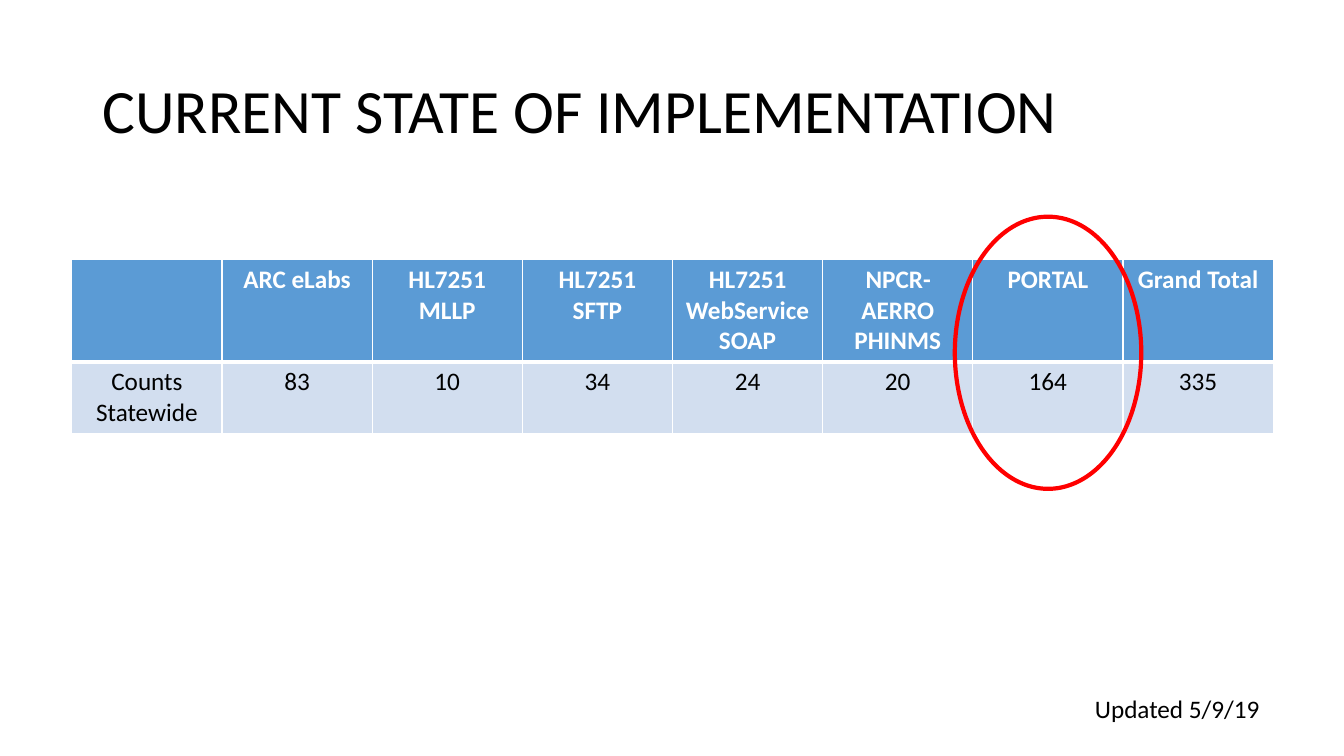
import pptx
import pptx.util
import pptx.oxml
import pptx.oxml.ns
import pptx.dml.color
import pptx.enum.text
import pptx.enum.shapes

Pt = pptx.util.Pt
RGB = pptx.dml.color.RGBColor
ALIGN = pptx.enum.text.PP_ALIGN
ANCHOR = pptx.enum.text.MSO_ANCHOR

# Content
TITLE = "CURRENT STATE OF IMPLEMENTATION"
DATE = "Updated 5/9/19"
COUNTS = [
    ("", "Counts Statewide"),
    ("ARC eLabs", "83"),
    ("HL7251 MLLP", "10"),
    ("HL7251 SFTP", "34"),
    ("HL7251 WebService SOAP", "24"),
    ("NPCR-AERRO PHINMS", "20"),
    ("PORTAL", "164"),
    ("Grand Total", "335"),
]

# Colours and formats
WHITE = RGB(0xFF, 0xFF, 0xFF)
BLACK = RGB(0, 0, 0)
BLUE = RGB(0x5B, 0x9B, 0xD5)
PALE = RGB(0xD2, 0xDE, 0xEF)
RED = RGB(0xFF, 0, 0)
HEAD = {"name": "Calibri", "size": Pt(18), "bold": True}
BODY = {"name": "Calibri", "size": Pt(18), "bold": False}
BIG = {"name": "Calibri", "size": Pt(44), "bold": False}
# Per row: height, fill, text colour, font, bottom border width
ROWS = [
    (72.5, BLUE, WHITE, HEAD, 3),
    (50.5, PALE, BLACK, BODY, 1),
]

# Layout in points: left, top, width, height
TITLE_BOX = (66, 28.8, 828, 104.4)
DATE_BOX = (775, 491.8, 574.5, 29)
LEFT, TOP, COL = 51.3, 185.3, 107.28
RING_COL, RING_TOP, RING_W, RING_H = 6, 154.8, 133.2, 194.4


def write(frame, text, form, color, align):
    para = frame.paragraphs[0]
    para.alignment = align
    run = para.add_run()
    run.text = text
    for key, value in form.items():
        setattr(run.font, key, value)
    run.font.color.rgb = color
    return para


def edge(cell, bottom):
    """Draw white borders on the four sides of a cell."""
    props = cell._tc.get_or_add_tcPr()
    sides = {"lnL": 1, "lnR": 1, "lnT": 1, "lnB": bottom}
    for spot, (side, width) in enumerate(sides.items()):
        line = pptx.oxml.parse_xml(
            f'<a:{side} {pptx.oxml.ns.nsdecls("a")} w="{Pt(width)}">'
            f'<a:solidFill><a:srgbClr val="{WHITE}"/></a:solidFill></a:{side}>')
        props.insert(spot, line)


def main():
    deck = pptx.Presentation()
    deck.slide_width, deck.slide_height = Pt(960), Pt(540)
    slide = deck.slides.add_slide(deck.slide_layouts[5])
    shapes = slide.shapes

    # Title
    title = shapes.title
    title.left, title.top, title.width, title.height = map(Pt, TITLE_BOX)
    title.text_frame.vertical_anchor = ANCHOR.MIDDLE
    para = write(title.text_frame, TITLE, BIG, BLACK, ALIGN.LEFT)
    para.line_spacing = 0.9

    # Table of counts
    size = [COL * len(COUNTS), sum(row[0] for row in ROWS)]
    table = shapes.add_table(len(ROWS), len(COUNTS),
                             *map(Pt, [LEFT, TOP] + size)).table
    for col in table.columns:
        col.width = Pt(COL)
    for r, (height, fill, color, form, bottom) in enumerate(ROWS):
        table.rows[r].height = Pt(height)
        for c, pair in enumerate(COUNTS):
            cell = table.cell(r, c)
            cell.fill.solid()
            cell.fill.fore_color.rgb = fill
            edge(cell, bottom)
            if pair[r]:
                write(cell.text_frame, pair[r], form, color, ALIGN.CENTER)

    # Date of the update
    date = shapes.add_textbox(*map(Pt, DATE_BOX)).text_frame
    date.word_wrap = True
    write(date, DATE, BODY, BLACK, ALIGN.LEFT)

    # Ring centred on the portal column
    left = LEFT + COL * (RING_COL + 0.5) - RING_W / 2
    ring = shapes.add_shape(pptx.enum.shapes.MSO_SHAPE.OVAL,
                            *map(Pt, (left, RING_TOP, RING_W, RING_H)))
    ring.shadow.inherit = False
    ring.fill.background()
    ring.line.color.rgb = RED
    ring.line.width = Pt(3)

    deck.save("out.pptx")


if __name__ == "__main__":
    main()
